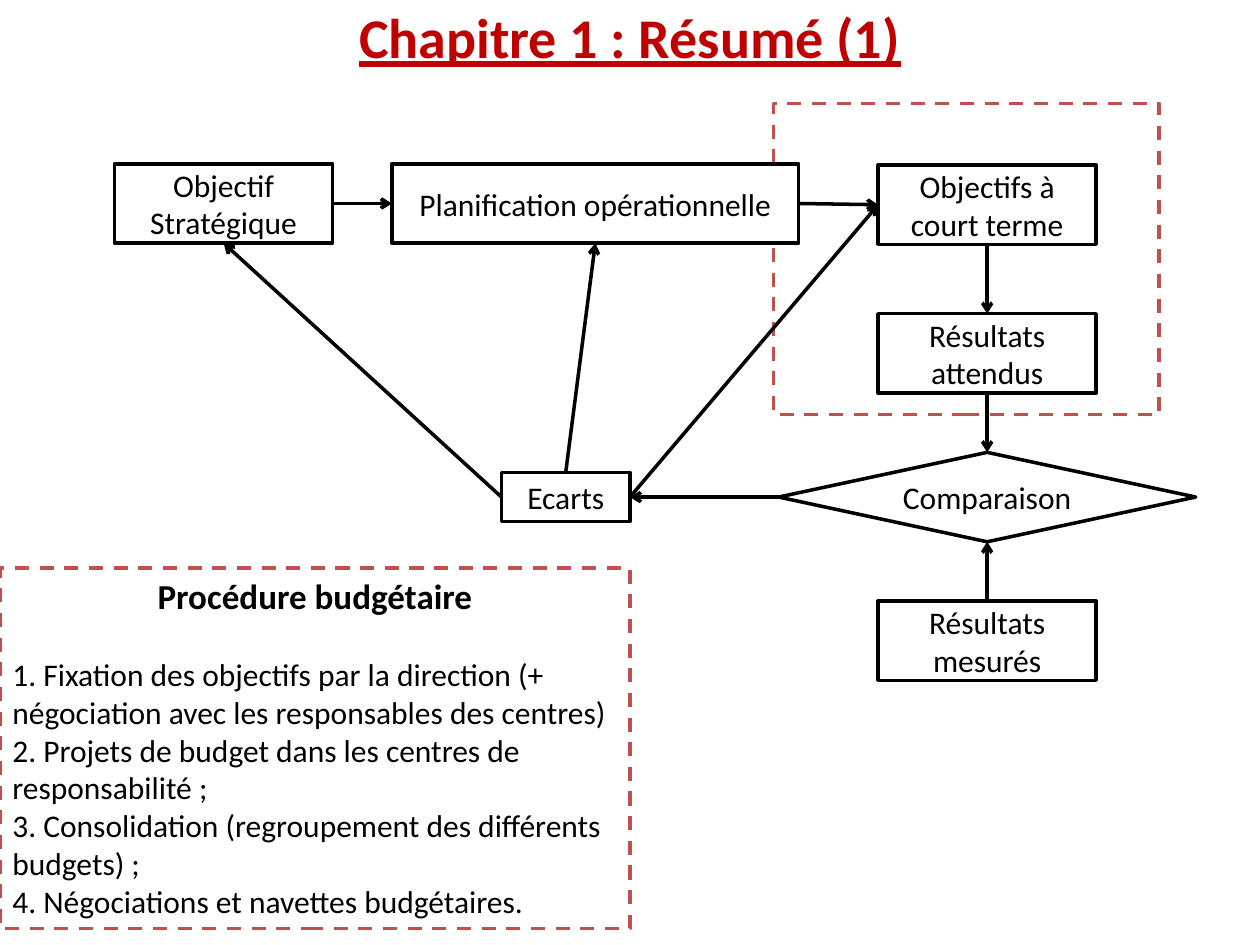
import dataclasses

import lxml.etree
import pptx
import pptx.dml.color
import pptx.enum.dml
import pptx.enum.shapes
import pptx.enum.text
import pptx.oxml.ns
import pptx.util

SHAPES = pptx.enum.shapes.MSO_SHAPE
ALIGN = pptx.enum.text.PP_ALIGN
ANCHOR = pptx.enum.text.MSO_ANCHOR
TOP, LEFT, BOTTOM, RIGHT = range(4)
COLUMNS, ROWS = 100, 75


@dataclasses.dataclass(frozen=True)
class Theme:
    font: str = "Calibri"
    title_size: int = 32
    heading_size: int = 20
    body_size: int = 18
    line_width: int = 2
    title: str = "C00000"
    ink: str = "000000"
    accent: str = "C0504D"
    paper: str = "FFFFFF"


@dataclasses.dataclass(frozen=True)
class Box:
    left: float
    top: float
    width: float
    height: float

    def inner(self, left, top, width, height):
        return Box(self.left + left, self.top + top, width, height)

    def lengths(self):
        cell = pptx.util.Inches(10) / COLUMNS
        return [round(value * cell) for value in dataclasses.astuple(self)]


THEME = Theme()


def color(value):
    return pptx.dml.color.RGBColor.from_string(value)


def add_panel(slide, box, kind=SHAPES.RECTANGLE, line=THEME.ink, dashed=False):
    shape = slide.shapes.add_shape(kind, *box.lengths())
    shape.shadow.inherit = False
    shape.fill.solid()
    shape.fill.fore_color.rgb = color(THEME.paper)
    shape.line.color.rgb = color(line)
    shape.line.width = pptx.util.Pt(THEME.line_width)
    if dashed:
        shape.line.dash_style = pptx.enum.dml.MSO_LINE.DASH
    return shape


def format_paragraph(paragraph, size, alignment=ALIGN.CENTER, ink=THEME.ink, bold=False):
    paragraph.alignment = alignment
    for run in paragraph.runs:
        run.font.name = THEME.font
        run.font.size = pptx.util.Pt(size)
        run.font.color.rgb = color(ink)
        run.font.bold = bold


def add_arrow(slide, start, start_side, end, end_side):
    connector = slide.shapes.add_connector(
        pptx.enum.shapes.MSO_CONNECTOR.STRAIGHT, 0, 0, 0, 0)
    connector.begin_connect(start, start_side)
    connector.end_connect(end, end_side)
    connector.line.color.rgb = color(THEME.ink)
    connector.line.width = pptx.util.Pt(THEME.line_width)
    qualified = pptx.oxml.ns.qn
    line = connector.line._get_or_add_ln()
    lxml.etree.SubElement(line, qualified("a:tailEnd"), type="arrow")
    lxml.etree.SubElement(connector._element.spPr, qualified("a:effectLst"))


def add_title(slide, box):
    text_frame = slide.shapes.add_textbox(*box.lengths()).text_frame
    text_frame.word_wrap = True
    text_frame.text = "Chapitre 1 : Résumé (1)"
    paragraph = text_frame.paragraphs[0]
    format_paragraph(paragraph, THEME.title_size, ink=THEME.title, bold=True)
    paragraph.runs[0].font.underline = True


def add_control_loop(slide, box):
    add_panel(slide, box.inner(52.3, 0, 30.6, 24.7), line=THEME.accent, dashed=True)
    width, height = 17.3, 6.3
    right_column = 60.6
    steps = {
        "strategy": ("Objectif Stratégique", (0, 4.8, width, height)),
        "planning": ("Planification opérationnelle", (22, 4.8, 32.3, height)),
        "targets": ("Objectifs à court terme", (right_column, 4.9, width, height)),
        "expected": ("Résultats attendus", (right_column, 16.7, width, height)),
        "comparison": ("Comparaison", (52.7, 27.7, 33.1, 7.1)),
        "measured": ("Résultats mesurés", (right_column, 39.5, width, height)),
        "gaps": ("Ecarts", (30.7, 29.3, 10.2, 3.9)),
    }
    shapes = {}
    for name, (label, place) in steps.items():
        kind = SHAPES.FLOWCHART_DECISION if name == "comparison" else SHAPES.RECTANGLE
        shape = add_panel(slide, box.inner(*place), kind)
        shape.text_frame.text = label
        shape.text_frame.vertical_anchor = ANCHOR.MIDDLE
        format_paragraph(shape.text_frame.paragraphs[0], THEME.body_size)
        shapes[name] = shape
    arrows = [
        ("strategy", RIGHT, "planning", LEFT),
        ("planning", RIGHT, "targets", LEFT),
        ("targets", BOTTOM, "expected", TOP),
        ("expected", BOTTOM, "comparison", TOP),
        ("measured", TOP, "comparison", BOTTOM),
        ("comparison", LEFT, "gaps", RIGHT),
        ("gaps", LEFT, "strategy", BOTTOM),
        ("gaps", TOP, "planning", BOTTOM),
        ("gaps", RIGHT, "targets", LEFT),
    ]
    for start, start_side, end, end_side in arrows:
        add_arrow(slide, shapes[start], start_side, shapes[end], end_side)


def add_procedure(slide, box):
    text_frame = add_panel(slide, box, line=THEME.accent, dashed=True).text_frame
    text_frame.vertical_anchor = ANCHOR.TOP
    text_frame.text = "\n".join([
        "Procédure budgétaire",
        "1. Fixation des objectifs par la direction (+ négociation avec les responsables des centres)",
        "2. Projets de budget dans les centres de responsabilité ;",
        "3. Consolidation (regroupement des différents budgets) ;",
        "4. Négociations et navettes budgétaires.",
    ])
    text_frame.auto_size = pptx.enum.text.MSO_AUTO_SIZE.SHAPE_TO_FIT_TEXT
    heading, *stages = text_frame.paragraphs
    format_paragraph(heading, THEME.heading_size, bold=True)
    heading.space_after = pptx.util.Pt(22)
    for stage in stages:
        format_paragraph(stage, THEME.body_size, ALIGN.LEFT)


def main():
    presentation = pptx.Presentation()
    presentation.slide_width = pptx.util.Inches(10)
    presentation.slide_height = presentation.slide_width * ROWS // COLUMNS
    slide = presentation.slides.add_slide(presentation.slide_layouts[6])
    add_title(slide, Box(5, -0.3, 90, 12.5))
    add_control_loop(slide, Box(9.1, 8.2, 85.8, 45.8))
    add_procedure(slide, Box(0, 45.1, 50, 28.6))
    presentation.save("out.pptx")


if __name__ == "__main__":
    main()
